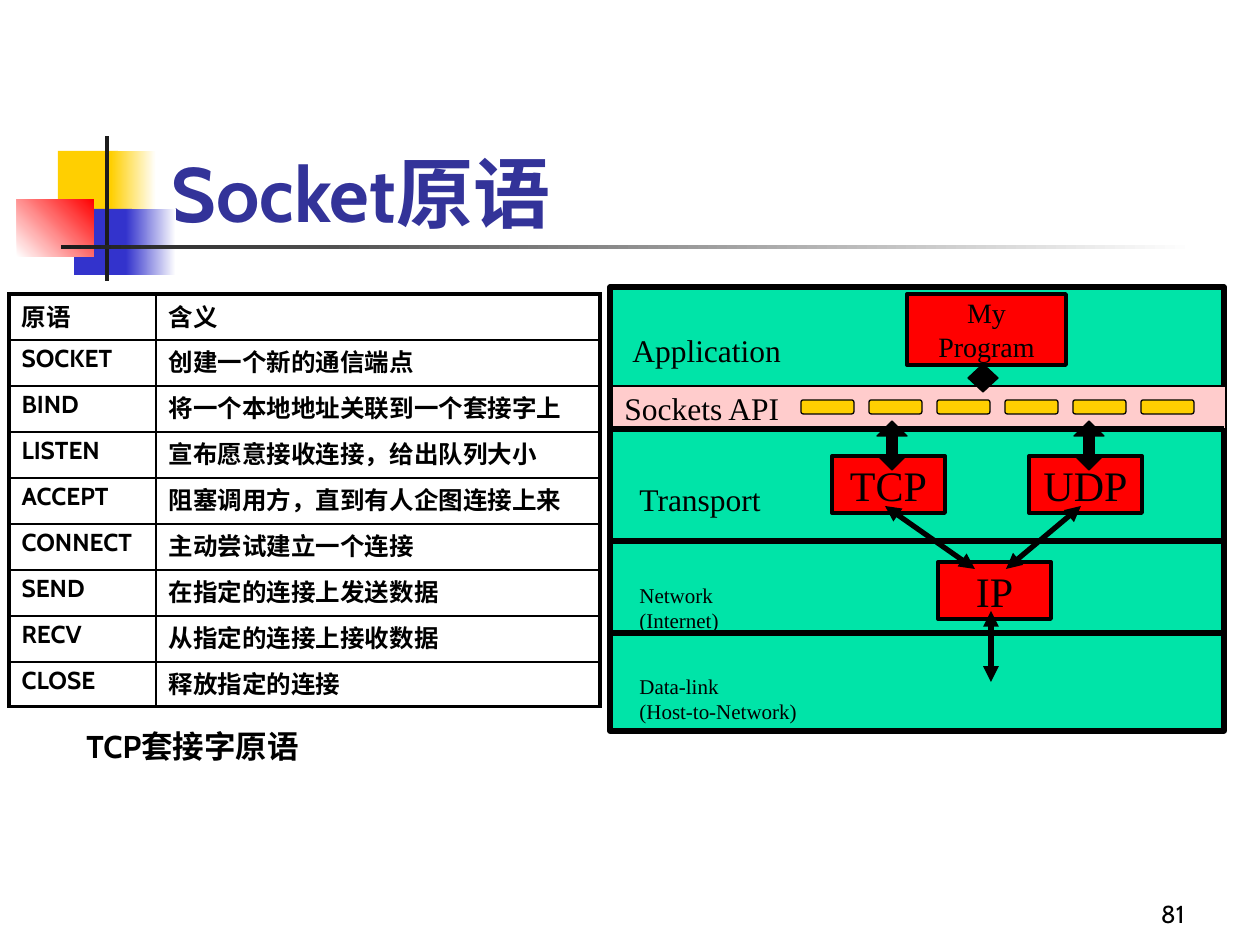
"""Build the slide on socket primitives, with a table and a protocol stack."""
import lxml.etree
import pptx
import pptx.dml.color
import pptx.enum.shapes
import pptx.enum.text
import pptx.oxml.ns
import pptx.util

SCALE = 914400 / 126
SHAPES = pptx.enum.shapes.MSO_SHAPE
ALIGN = pptx.enum.text.PP_ALIGN
ANCHOR = pptx.enum.text.MSO_ANCHOR
RGB = pptx.dml.color.RGBColor.from_string
qn = pptx.oxml.ns.qn


class Theme:
    sans, serif = "Cabin", "Times New Roman"
    black, dark, white = "000000", "1C1C1C", "FFFFFF"
    yellow, blue, red = "FFCF01", "3333CC", "FF0000"
    title, green, pink = "333399", "00E4A8", "FFCCCC"
    title_size, protocol_size, label_size = 44, 24, 18
    program_size, body_size, small_size = 16, 14, 12
    hairline, thin, medium, thick = 0.75, 1, 2.25, 3


def add_box(kind, box, fill, line=None, fade=None, angle=0):
    shape = slide.shapes.add_shape(kind, *[round(v * SCALE) for v in box])
    shape.shadow.inherit = False
    if fade:
        shape.fill.gradient()
        shape.fill.gradient_angle = angle
        for stop, color in zip(shape.fill.gradient_stops, (fill, fade)):
            stop.color.rgb = RGB(color)
    else:
        shape.fill.solid()
        shape.fill.fore_color.rgb = RGB(fill)
    if line:
        shape.line.color.rgb = RGB(Theme.black)
        shape.line.width = pptx.util.Pt(line)
    else:
        shape.line.fill.background()
    return shape


def write(frame, text, size, font=Theme.serif, color=Theme.black, bold=False,
          align=ALIGN.LEFT, anchor=ANCHOR.TOP, wrap=False):
    frame.text = text
    frame.word_wrap = wrap
    frame.vertical_anchor = anchor
    for paragraph in frame.paragraphs:
        paragraph.alignment = align
        for run in paragraph.runs:
            run.font.size = pptx.util.Pt(size)
            run.font.name = font
            run.font.bold = bold
            run.font.color.rgb = RGB(color)


presentation = pptx.Presentation()
presentation.slide_width = round(1260 * SCALE)
presentation.slide_height = round(945 * SCALE)
slide = presentation.slides.add_slide(presentation.slide_layouts[5])

for box, fill, fade, angle in [
    ((58, 151, 60, 66), Theme.yellow, None, 0),
    ((111, 151, 45, 66), Theme.yellow, Theme.white, 0),
    ((74, 209, 58, 66), Theme.blue, None, 0),
    ((126, 209, 50, 66), Theme.blue, Theme.white, 0),
    ((17, 199, 77, 58), Theme.white, Theme.red, 45),
    ((105, 136, 4, 145), Theme.dark, None, 0),
    ((61, 245, 1134, 4), Theme.dark, Theme.white, 0),
]:
    add_box(SHAPES.RECTANGLE, box, fill, fade=fade, angle=angle)

title = slide.shapes.title
title.left, title.top, title.width, title.height = [
    round(v * SCALE) for v in (159, 86, 1073, 158)]
title.text_frame.auto_size = pptx.enum.text.MSO_AUTO_SIZE.NONE
write(title.text_frame, "Socket原语", Theme.title_size, Theme.sans,
      Theme.title, True, anchor=ANCHOR.BOTTOM, wrap=True)

primitives = [
    ("原语", "含义"),
    ("SOCKET", "创建一个新的通信端点"),
    ("BIND", "将一个本地地址关联到一个套接字上"),
    ("LISTEN", "宣布愿意接收连接，给出队列大小"),
    ("ACCEPT", "阻塞调用方，直到有人企图连接上来"),
    ("CONNECT", "主动尝试建立一个连接"),
    ("SEND", "在指定的连接上发送数据"),
    ("RECV", "从指定的连接上接收数据"),
    ("CLOSE", "释放指定的连接"),
]
last = len(primitives) - 1
table = slide.shapes.add_table(
    len(primitives), 2, *[round(v * SCALE) for v in (9, 294, 591, 411)]).table
table.first_row = table.horz_banding = False
for column, width in zip(table.columns, (147, 444)):
    column.width = round(width * SCALE)
for i, texts in enumerate(primitives):
    table.rows[i].height = round((41 if i == last else 46) * SCALE)
    for j, text in enumerate(texts):
        cell = table.cell(i, j)
        write(cell.text_frame, text, Theme.body_size, Theme.sans, bold=True, wrap=True)
        cell.text_frame.paragraphs[0].line_spacing = 0.9
        cell.vertical_anchor = ANCHOR.TOP
        properties = cell._tc.get_or_add_tcPr()
        for side, outer in (("L", j == 0), ("R", j == 1), ("T", i == 0), ("B", i == last)):
            width = pptx.util.Pt(Theme.medium if outer else Theme.thin)
            border = lxml.etree.SubElement(properties, qn("a:ln" + side), w=str(int(width)))
            solid = lxml.etree.SubElement(border, qn("a:solidFill"))
            lxml.etree.SubElement(solid, qn("a:srgbClr"), val=Theme.black)
        cell.fill.background()

add_box(SHAPES.RECTANGLE, (610, 287, 614, 444), Theme.green, Theme.thick)
sockets = add_box(SHAPES.RECTANGLE, (612, 386, 614, 43), Theme.pink, Theme.hairline)
write(sockets.text_frame, "Sockets API", Theme.label_size, anchor=ANCHOR.MIDDLE)

for box, text, size in [
    ((620, 325, 174, 50), "Application", Theme.label_size),
    ((627, 474, 147, 50), "Transport", Theme.label_size),
    ((627, 576, 105, 63), "Network\n(Internet)", Theme.small_size),
    ((627, 667, 183, 63), "Data-link\n(Host-to-Network)", Theme.small_size),
]:
    label = slide.shapes.add_textbox(*[round(v * SCALE) for v in box])
    write(label.text_frame, text, size)

for box, text, size in [
    ((832, 456, 113, 57), "TCP", Theme.protocol_size),
    ((1029, 456, 113, 57), "UDP", Theme.protocol_size),
    ((907, 294, 159, 71), "My\nProgram", Theme.program_size),
    ((938, 562, 113, 57), "IP", Theme.protocol_size),
]:
    block = add_box(SHAPES.RECTANGLE, box, Theme.red, Theme.medium)
    write(block.text_frame, text, size, align=ALIGN.CENTER, anchor=ANCHOR.MIDDLE)

layer_lines = [(612, y, 1224, y, False) for y in (429, 541, 633)]
protocol_links = [(885, 506, 975, 569, True), (1081, 506, 1006, 569, True),
                  (991, 611, 991, 682, True)]
for *ends, arrows in layer_lines + protocol_links:
    connector = slide.shapes.add_connector(
        pptx.enum.shapes.MSO_CONNECTOR.STRAIGHT, *[round(v * SCALE) for v in ends])
    connector.line.color.rgb = RGB(Theme.black)
    connector.line.width = pptx.util.Pt(Theme.thick)
    if arrows:
        line = connector.line._get_or_add_ln()
        for end in ("a:headEnd", "a:tailEnd"):
            lxml.etree.SubElement(line, qn(end), type="triangle")
    lxml.etree.SubElement(connector._element.spPr, qn("a:effectLst"))

for i in range(6):
    add_box(SHAPES.FLOWCHART_ALTERNATE_PROCESS, (801 + 68 * i, 400, 53, 14),
            Theme.yellow, Theme.hairline)

for box, head in [((877, 421, 30, 49), 0.35), ((1074, 421, 30, 49), 0.35),
                  ((968, 364, 30, 28), 0.2)]:
    arrow = add_box(SHAPES.UP_DOWN_ARROW, box, Theme.black, Theme.hairline)
    arrow.adjustments[0] = 0.5
    arrow.adjustments[1] = head

caption = slide.shapes.add_textbox(*[round(v * SCALE) for v in (74, 721, 248, 50)])
write(caption.text_frame, "TCP套接字原语", Theme.label_size, Theme.sans, bold=True, wrap=True)
caption.text_frame.paragraphs[0].space_before = pptx.util.Pt(9)

number = slide.shapes.add_textbox(*[round(v * SCALE) for v in (935, 872, 262, 63)])
write(number.text_frame, "81", Theme.body_size, Theme.sans,
      align=ALIGN.RIGHT, anchor=ANCHOR.BOTTOM, wrap=True)

presentation.save("out.pptx")
